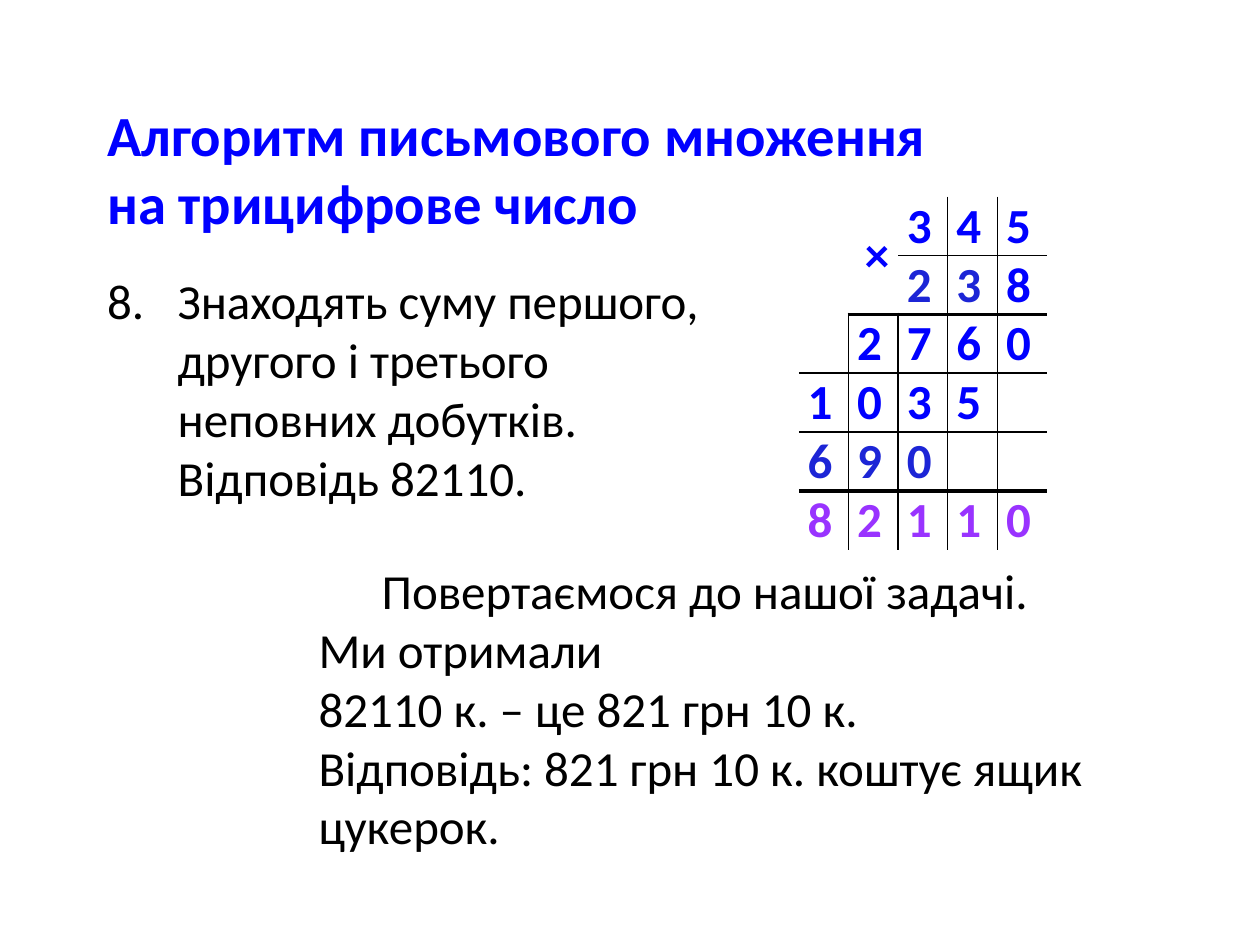
from dataclasses import dataclass

from pptx import Presentation, util as u
from pptx.dml.color import RGBColor
from pptx.enum import text as t
from pptx.oxml import ns, xmlchemy as x


@dataclass(frozen=True)
class Theme:
    """Colours, typeface and type sizes of the slide."""
    font: str = "Calibri"
    title_size: float = 32.4
    body_size: float = 28
    black: str = "000000"
    white: str = "FFFFFF"
    blue: str = "0000FF"
    navy: str = "1C25D6"
    violet: str = "9933FF"


@dataclass(frozen=True)
class Box:
    """A place on a grid of 100 columns and 75 rows."""
    left: float
    top: float
    width: float
    height: float


@dataclass(frozen=True)
class DigitRow:
    """Digits of one line of the calculation, their colours and the rule below."""
    digits: str
    colors: tuple
    rule_start: int
    rule_width: float
    divider_start: int


THEME = Theme()
UNIT = u.Inches(0.1)
COLUMNS = 5
BLUE, NAVY, VIOLET = ((color,) * COLUMNS for color in (THEME.blue, THEME.navy, THEME.violet))
CALCULATION = (
    DigitRow(" ×345", BLUE, 2, 1, 2),
    DigitRow("  238", NAVY[:4] + BLUE[:1], 1, 2.25, 2),
    DigitRow(" 2760", BLUE, 0, 1, 0),
    DigitRow("1035 ", BLUE, 0, 1, 0),
    DigitRow("690  ", NAVY, 0, 3, 0),
    DigitRow("82110", VIOLET, COLUMNS, 0, 0),
)


def place(box: Box) -> list:
    """Turn a grid box into slide lengths."""
    return [round(value * UNIT) for value in (box.left, box.top, box.width, box.height)]


def move(shape, box: Box) -> None:
    """Put a shape on the grid."""
    shape.left, shape.top, shape.width, shape.height = place(box)


def style(paragraph, color: str, size: float, bold: bool = False) -> None:
    """Format every run of a paragraph."""
    for run in paragraph.runs:
        run.font.name = THEME.font
        run.font.size = u.Pt(size)
        run.font.bold = bold
        run.font.color.rgb = RGBColor.from_string(color)


def fill_title(shape, box: Box, words: str) -> None:
    """Write the heading."""
    move(shape, box)
    frame = shape.text_frame
    frame.text = words
    frame.auto_size = t.MSO_AUTO_SIZE.NONE
    frame.vertical_anchor = t.MSO_ANCHOR.MIDDLE
    frame.paragraphs[0].alignment = t.PP_ALIGN.LEFT
    style(frame.paragraphs[0], THEME.blue, THEME.title_size, True)


def fill_step(shape, box: Box, words: str, number: int) -> None:
    """Write one numbered step of the algorithm."""
    move(shape, box)
    shape.fill.solid()
    shape.fill.fore_color.rgb = RGBColor.from_string(THEME.white)
    frame = shape.text_frame
    frame.text = words
    frame.auto_size = t.MSO_AUTO_SIZE.NONE
    paragraph = frame.paragraphs[0]
    properties = paragraph._p.get_or_add_pPr()
    indent = u.Inches(0.56)
    properties.set("marL", str(indent))
    properties.set("indent", str(-indent))
    bullet = x.OxmlElement("a:buAutoNum")
    bullet.set("type", "arabicPeriod")
    bullet.set("startAt", str(number))
    properties.append(bullet)
    paragraph.space_before = u.Pt(0)
    style(paragraph, THEME.black, THEME.body_size)


def add_answer(slide, box: Box, words: str) -> None:
    """Add the text that returns to the problem."""
    frame = slide.shapes.add_textbox(*place(box)).text_frame
    frame.word_wrap = True
    frame.text = words
    frame.auto_size = t.MSO_AUTO_SIZE.SHAPE_TO_FIT_TEXT
    for paragraph in frame.paragraphs:
        style(paragraph, THEME.black, THEME.body_size)


def rule_below(row: int, column: int) -> float:
    """Give the width of the horizontal rule below a cell."""
    if row < 0:
        return 0
    line = CALCULATION[row]
    return line.rule_width if column >= line.rule_start else 0


def divider_after(row: int, column: int) -> float:
    """Give the width of the vertical rule after a cell."""
    return int(CALCULATION[row].divider_start <= column < COLUMNS - 1)


def set_borders(cell, widths: dict) -> None:
    """Draw the four sides of a cell; a zero width hides the side."""
    properties = cell._tc.get_or_add_tcPr()
    for index, (side, width) in enumerate(widths.items()):
        line = x.OxmlElement(f"a:ln{side}")
        line.set("w", str(u.Pt(width)))
        if width:
            fill = x.OxmlElement("a:solidFill")
            color = x.OxmlElement("a:srgbClr")
            color.set("val", THEME.black)
            fill.append(color)
        else:
            fill = x.OxmlElement("a:noFill")
        line.append(fill)
        properties.insert(index, line)


def add_calculation(slide, box: Box) -> None:
    """Add the written multiplication as a table."""
    table = slide.shapes.add_table(len(CALCULATION), COLUMNS, *place(box)).table
    table.first_row = table.horz_banding = False
    for row, line in enumerate(CALCULATION):
        for column, (digit, color) in enumerate(zip(line.digits, line.colors)):
            cell = table.cell(row, column)
            cell.margin_left = cell.margin_right = u.Inches(0.07)
            cell.margin_top = cell.margin_bottom = 0
            cell.fill.background()
            set_borders(cell, {
                "L": divider_after(row, column - 1),
                "R": divider_after(row, column),
                "T": rule_below(row - 1, column),
                "B": rule_below(row, column),
            })
            cell.text = digit.strip()
            style(cell.text_frame.paragraphs[0], color, THEME.body_size, True)
    for column in range(2):
        table.cell(0, column).merge(table.cell(1, column))
    sign = table.cell(0, 1)
    sign.vertical_anchor = t.MSO_ANCHOR.MIDDLE
    sign.text_frame.paragraphs[0].alignment = t.PP_ALIGN.RIGHT


def main() -> None:
    """Build and save the slide."""
    presentation = Presentation()
    presentation.slide_width, presentation.slide_height = 100 * UNIT, 75 * UNIT
    slide = presentation.slides.add_slide(presentation.slide_layouts[1])
    title, body = slide.placeholders
    fill_title(title, Box(7.5, 8, 86.7, 10.6),
               "Алгоритм письмового множення\vна трицифрове число")
    fill_step(body, Box(7.5, 21, 51.1, 22),
              "Знаходять суму першого, другого і третього неповних добутків. "
              "Відповідь 82110.", 8)
    add_answer(slide, Box(24.3, 44, 68.5, 24.6),
               "\tПовертаємося до нашої задачі.\n"
               "Ми отримали \v82110 к. – це 821 грн 10 к.\n"
               "Відповідь: 821 грн 10 к. коштує ящик цукерок.")
    add_calculation(slide, Box(63.4, 15.6, 19.7, 28))
    presentation.save("out.pptx")


if __name__ == "__main__":
    main()
